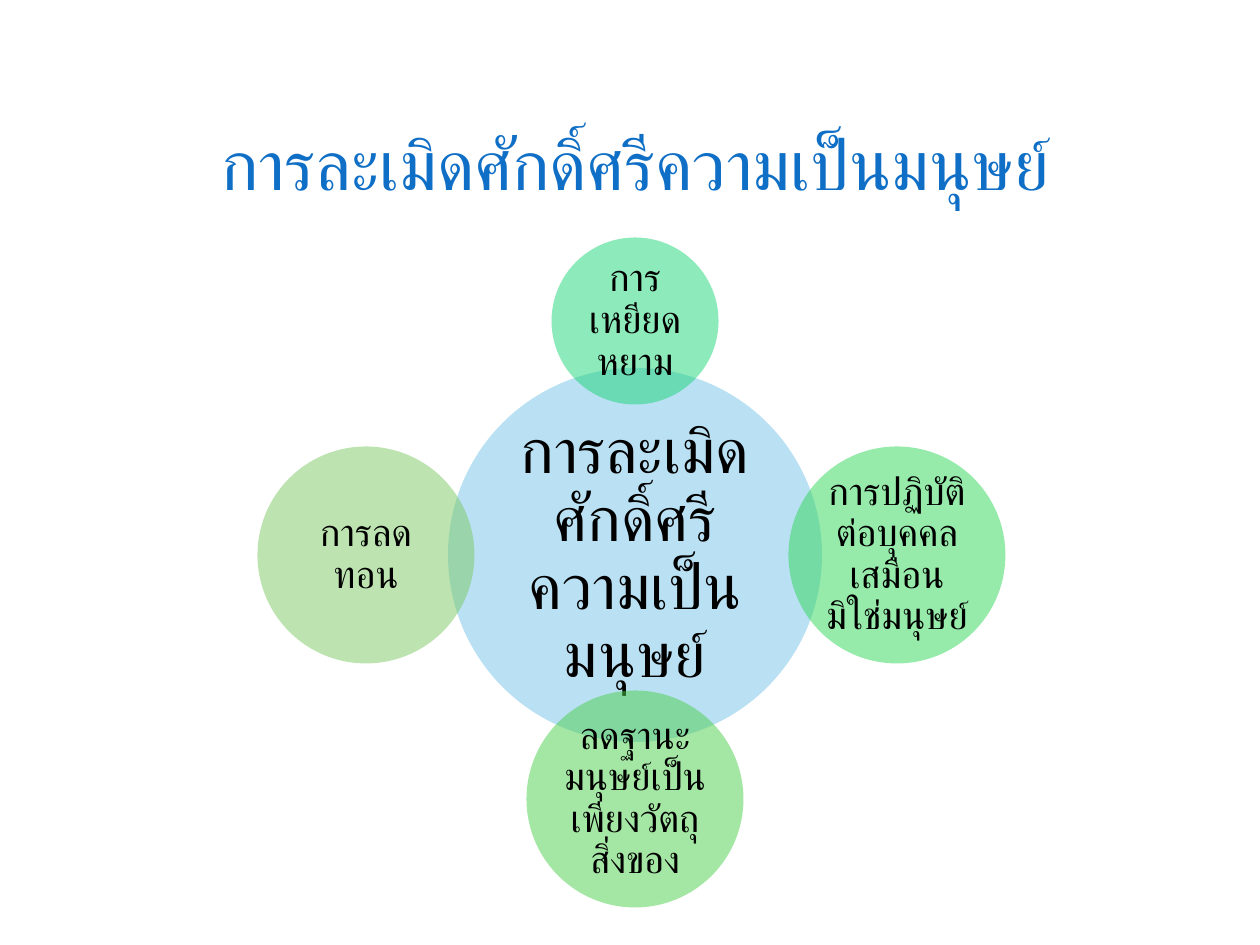
from lxml import etree
from pptx import Presentation
from pptx.dml.color import RGBColor
from pptx.enum.shapes import MSO_SHAPE
from pptx.enum.text import MSO_ANCHOR, PP_ALIGN
from pptx.oxml.ns import qn
from pptx.util import Emu, Pt

PX = 914400 / 126
FONT = "Lato"
OVAL = MSO_SHAPE.OVAL
CENTER = PP_ALIGN.CENTER
MIDDLE, BOTTOM = MSO_ANCHOR.MIDDLE, MSO_ANCHOR.BOTTOM

BLACK = RGBColor(0x00, 0x00, 0x00)
BLUE = RGBColor(0x0F, 0x6F, 0xC6)
SKY = RGBColor(0x77, 0xC2, 0xE8)
MINT = RGBColor(0x1C, 0xD6, 0x76)
EMERALD = RGBColor(0x2F, 0xD7, 0x57)
GREEN = RGBColor(0x4A, 0xCF, 0x49)
OLIVE = RGBColor(0x7C, 0xCA, 0x62)

TITLE = "การละเมิดศักดิ์ศรีความเป็นมนุษย์"
MID_X, MID_Y = 635, 555
SATELLITES = [
    ("การเหยียดหยาม", MID_X, 321, 167, MINT),
    ("การปฏิบัติต่อบุคคลเสมือนมิใช่มนุษย์", 897, MID_Y, 217, EMERALD),
    ("ลดฐานะมนุษย์เป็นเพียงวัตถุ สิ่งของ", MID_X, 799, 217, GREEN),
    ("การลดทอน", 366, MID_Y, 217, OLIVE),
]


def px(n):
    """Convert pixels to EMU."""
    return Emu(round(n * PX))


def write(sp, text, size, color, anchor, spacing):
    """Fill a shape with one centred paragraph."""
    tf = sp.text_frame
    tf.word_wrap = True
    tf.vertical_anchor = anchor
    p = tf.paragraphs[0]
    p.alignment = CENTER
    p.line_spacing = spacing
    r = p.add_run()
    r.text = text
    r.font.name = FONT
    r.font.size = Pt(size)
    r.font.color.rgb = color


def add_title(s, text):
    """Add the slide heading."""
    sp = s.shapes.add_textbox(px(186), px(84), px(898), px(126))
    write(sp, text, 40, BLUE, BOTTOM, 0.8)


def add_circle(s, text, cx, cy, d, color, size=22, inset=4):
    """Add a half-transparent labelled circle around a centre point."""
    sp = s.shapes.add_shape(OVAL, px(cx - d / 2), px(cy - d / 2), px(d), px(d))
    sp.shadow.inherit = False
    sp.line.fill.background()
    sp.fill.solid()
    sp.fill.fore_color.rgb = color
    clr = sp.fill._xPr.find(qn("a:solidFill"))[0]
    etree.SubElement(clr, qn("a:alpha"), val="50000")
    tf = sp.text_frame
    tf.margin_left = tf.margin_right = px(inset)
    tf.margin_top = tf.margin_bottom = px(inset)
    write(sp, text, size, BLACK, MIDDLE, 0.9)


def main():
    """Build the slide and save it."""
    prs = Presentation()
    prs.slide_width, prs.slide_height = px(1260), px(945)
    s = prs.slides.add_slide(prs.slide_layouts[6])
    add_title(s, TITLE)
    add_circle(s, TITLE, MID_X, MID_Y, 374, SKY, size=36, inset=6)
    for satellite in SATELLITES:
        add_circle(s, *satellite)
    prs.save("out.pptx")


if __name__ == "__main__":
    main()
